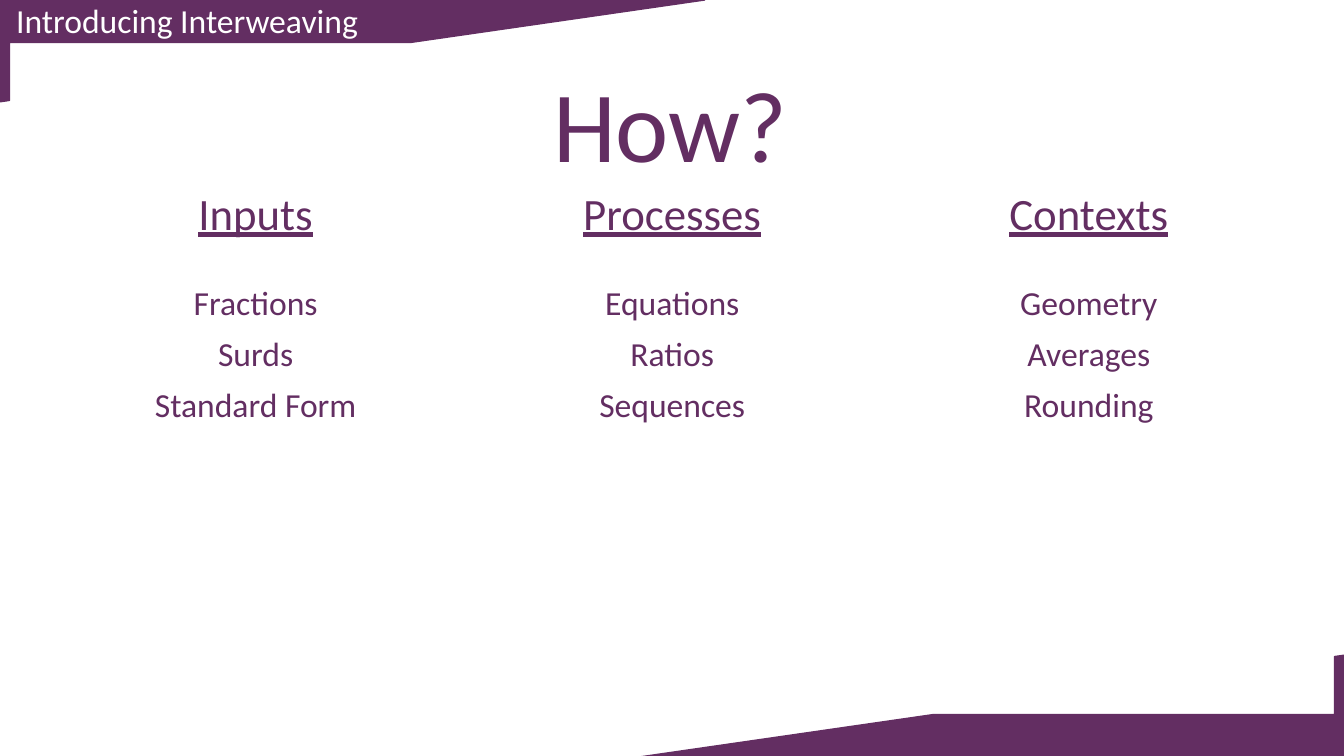
from pptx import Presentation
from pptx.dml.color import RGBColor
from pptx.enum.shapes import MSO_SHAPE
from pptx.enum.text import MSO_ANCHOR, PP_ALIGN
from pptx.util import Pt

PURPLE = RGBColor(0x63, 0x2E, 0x62)
WHITE = RGBColor(0xFF, 0xFF, 0xFF)

WIDTH, HEIGHT = 960, 540
FRAME_WIDTH, FRAME_HEIGHT = 503.3, 72.7


def write(frame, text, size, color, align, underline=False):
    para = frame.paragraphs[0]
    para.alignment = align
    span = para.add_run()
    span.text = text
    span.font.color.rgb = color
    formats = {"name": "Calibri", "size": Pt(size), "bold": False, "underline": underline}
    for name, value in formats.items():
        setattr(span.font, name, value)


deck = Presentation()
deck.slide_width, deck.slide_height = Pt(WIDTH), Pt(HEIGHT)
page = deck.slides.add_slide(deck.slide_layouts[6])

corners = [
    (0, 0, 0, "Introducing Interweaving"),
    (WIDTH - FRAME_WIDTH, HEIGHT - FRAME_HEIGHT + 0.7, 180, ""),
]
for left, top, rotation, label in corners:
    corner = page.shapes.add_shape(
        MSO_SHAPE.HALF_FRAME, Pt(left), Pt(top), Pt(FRAME_WIDTH), Pt(FRAME_HEIGHT)
    )
    corner.adjustments[0] = 0.417
    corner.adjustments[1] = 0.093
    corner.rotation = rotation
    corner.shadow.inherit = False
    corner.fill.solid()
    corner.fill.fore_color.rgb = PURPLE
    corner.line.color.rgb = PURPLE
    corner.line.width = Pt(1)
    if label:
        frame = corner.text_frame
        layout = {
            "margin_left": Pt(11.5),
            "margin_top": 0,
            "margin_right": Pt(7.2),
            "margin_bottom": 0,
            "vertical_anchor": MSO_ANCHOR.TOP,
        }
        for name, value in layout.items():
            setattr(frame, name, value)
        write(frame, label, 24, WHITE, PP_ALIGN.LEFT)

title = page.shapes.add_textbox(Pt(15.8), Pt(20.9), Pt(926), Pt(133.2))
title.text_frame.word_wrap = True
title.text_frame.vertical_anchor = MSO_ANCHOR.MIDDLE
write(title.text_frame, "How?", 72, PURPLE, PP_ALIGN.CENTER)

topics = [
    ["Inputs", "Processes", "Contexts"],
    ["", "", ""],
    ["Fractions", "Equations", "Geometry"],
    ["Surds", "Ratios", "Averages"],
    ["Standard Form", "Sequences", "Rounding"],
]
row_heights = [46.3, 22.6, 36.5, 36.5, 36.5]
table = page.shapes.add_table(
    len(topics), 3, Pt(33.8), Pt(130.3), Pt(892.8), Pt(sum(row_heights))
).table
table.horz_banding = False

for row, (height, words) in enumerate(zip(row_heights, topics)):
    table.rows[row].height = Pt(height)
    for column, word in enumerate(words):
        cell = table.cell(row, column)
        cell.fill.background()
        if not word:
            cell.margin_top = cell.margin_bottom = 0
            continue
        if row and column == 0:
            cell.vertical_anchor = MSO_ANCHOR.MIDDLE
        write(cell.text_frame, word, 24 if row else 32, PURPLE, PP_ALIGN.CENTER, row == 0)

deck.save("out.pptx")
